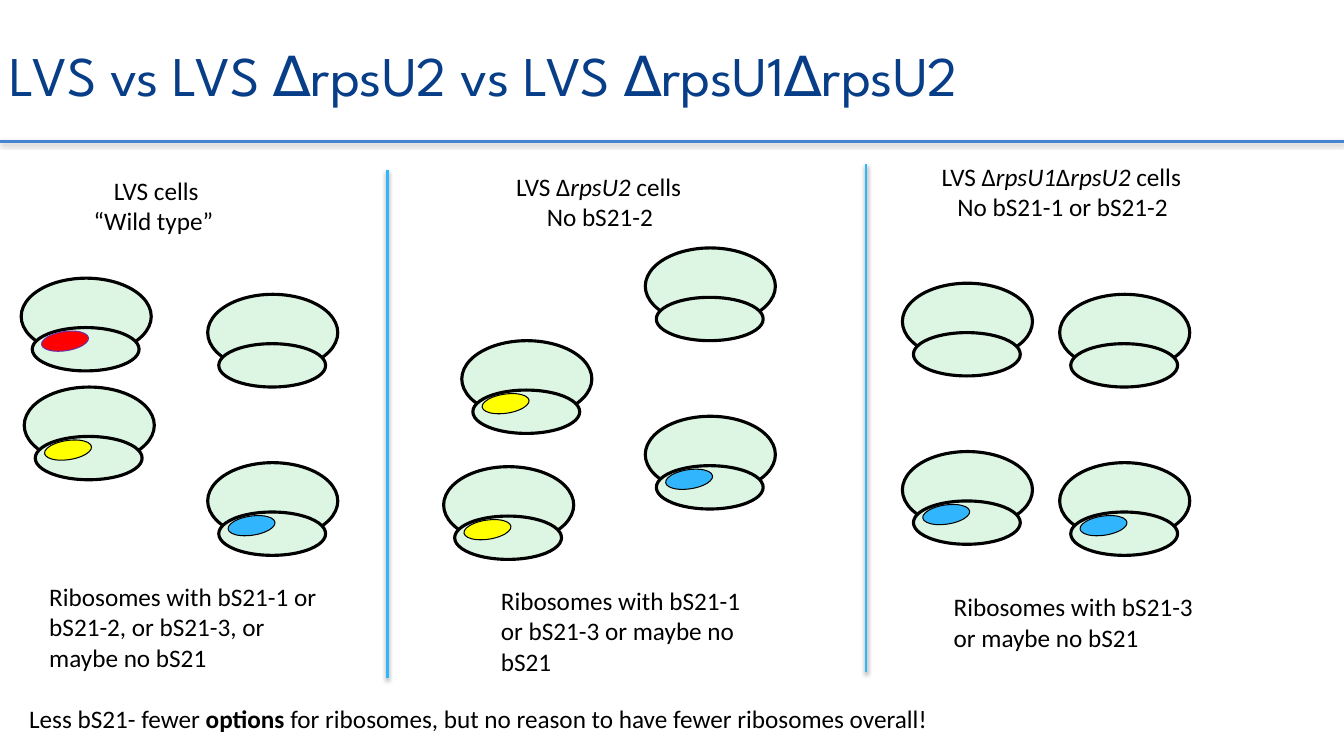
from dataclasses import dataclass

from lxml import etree
from pptx import Presentation
from pptx.dml.color import RGBColor
from pptx.enum import shapes, text
from pptx.oxml import ns
from pptx.util import Inches, Pt

COLORS = {
    "title": "073E87",
    "text": "000000",
    "rule": "4584D3",
    "divider": "31B6FD",
    "ribosome": "DDF5E3",
    "outline": "000000",
    "red": "FF0000",
    "red_outline": "7030A0",
    "yellow": "FFFF00",
    "blue": "31B6FD",
}
LEFT, CENTER, JUSTIFY = (
    text.PP_ALIGN.LEFT, text.PP_ALIGN.CENTER, text.PP_ALIGN.JUSTIFY)
BODY = {"size": Pt(18), "name": "Calibri"}
TITLE = {"size": Pt(40), "name": "League Spartan"}
ITALIC = {"italic": True}
BOLD = {"bold": True}
TILT = -8.4


@dataclass
class Run:
    words: str
    style: dict | None = None


@dataclass
class Para:
    runs: list[Run]
    align: text.PP_ALIGN = LEFT


@dataclass
class Label:
    box: tuple[float, float, float, float]
    paras: list[Para]


@dataclass
class Ribosome:
    x: float
    y: float
    protein: str | None = None


@dataclass
class Rule:
    start: tuple[float, float]
    end: tuple[float, float]
    color: str


RULES = [
    Rule((13.33, 1.4), (0, 1.4), "rule"),
    Rule((3.84, 1.69), (3.84, 6.73), "divider"),
    Rule((8.59, 1.63), (8.59, 6.67), "divider"),
]

HEADING = Label((0, 0.13, 13.21, 1.21),
                [Para([Run("LVS vs LVS ∆rpsU2 vs LVS ∆rpsU1∆rpsU2")])])

LABELS = [
    Label((0.82, 1.69, 1.46, 0.71), [
        Para([Run("LVS cells")], CENTER),
        Para([Run("“Wild type” ")], CENTER)]),
    Label((0.39, 5.72, 3.07, 1.01), [
        Para([Run("Ribosomes with bS21-1 or bS21-2, or bS21-3, "
                  "or maybe no bS21")])]),
    Label((5.02, 1.65, 1.86, 0.71), [
        Para([Run("LVS ∆"), Run("rpsU2", ITALIC), Run(" cells")], JUSTIFY),
        Para([Run("No bS21-2")], CENTER)]),
    Label((4.87, 5.76, 2.71, 1.01), [
        Para([Run("Ribosomes with bS21-1 or bS21-3 or maybe no bS21")])]),
    Label((9.24, 1.55, 2.6, 0.71), [
        Para([Run("LVS ∆"), Run("rpsU1", ITALIC), Run("∆"),
              Run("rpsU2", ITALIC), Run(" cells")], JUSTIFY),
        Para([Run("No bS21-1 or bS21-2")], CENTER)]),
    Label((9.36, 5.82, 2.71, 0.71), [
        Para([Run("Ribosomes with bS21-3 or maybe no bS21")])]),
    Label((0.19, 6.93, 9.25, 0.4), [
        Para([Run("Less bS21- fewer "), Run("options", BOLD),
              Run(" for ribosomes, but no reason to have fewer "
                  "ribosomes overall!")])]),
]

RIBOSOMES = [
    # Wild type
    Ribosome(0.21, 2.76, "red"),
    Ribosome(2.06, 4.59, "blue"),
    Ribosome(0.24, 3.84, "yellow"),
    Ribosome(2.06, 2.92),
    # Without bS21-2
    Ribosome(6.4, 4.13, "blue"),
    Ribosome(4.58, 3.38, "yellow"),
    Ribosome(6.4, 2.46),
    Ribosome(4.4, 4.63, "yellow"),
    # Without bS21-1 and bS21-2
    Ribosome(10.51, 4.59, "blue"),
    Ribosome(10.51, 2.92),
    Ribosome(8.95, 4.48, "blue"),
    Ribosome(8.95, 2.81),
]


def rgb(name: str) -> RGBColor:
    return RGBColor.from_string(COLORS[name])


def add_rule(slide, rule: Rule) -> None:
    """Draw a straight line with a soft shadow below it."""
    ends = [Inches(v) for v in (*rule.start, *rule.end)]
    line = slide.shapes.add_connector(shapes.MSO_CONNECTOR.STRAIGHT, *ends)
    line.line.color.rgb = rgb(rule.color)
    line.line.width = Pt(2)
    effects = etree.SubElement(line._element.spPr, ns.qn("a:effectLst"))
    shadow = etree.SubElement(
        effects, ns.qn("a:outerShdw"), blurRad=str(Pt(3.1)),
        dist=str(Pt(1.6)), dir="5400000", rotWithShape="0")
    black = etree.SubElement(shadow, ns.qn("a:srgbClr"), val="000000")
    etree.SubElement(black, ns.qn("a:alpha"), val="38000")


def add_label(slide, label: Label, font: dict, color: str,
              anchor=text.MSO_ANCHOR.TOP) -> None:
    sp = slide.shapes.add_textbox(*map(Inches, label.box))
    tf = sp.text_frame
    tf.word_wrap = True
    tf.vertical_anchor = anchor
    for i, para in enumerate(label.paras):
        p = tf.add_paragraph() if i else tf.paragraphs[0]
        p.alignment = para.align
        for run in para.runs:
            r = p.add_run()
            r.text = run.words
            r.font.color.rgb = rgb(color)
            for key, value in {**font, **(run.style or {})}.items():
                setattr(r.font, key, value)


def add_ellipse(group, box: tuple[float, float, float, float], fill: str,
                outline: str, width: float, rotation: float = 0) -> None:
    sp = group.shapes.add_shape(shapes.MSO_SHAPE.OVAL, *map(Inches, box))
    sp.shadow.inherit = False
    sp.rotation = rotation
    sp.fill.solid()
    sp.fill.fore_color.rgb = rgb(fill)
    sp.line.color.rgb = rgb(outline)
    sp.line.width = Pt(width)


def add_ribosome(slide, ribosome: Ribosome) -> None:
    """Group a large subunit, a small subunit and, if any, its bS21."""
    x, y = ribosome.x, ribosome.y
    group = slide.shapes.add_group_shape()
    add_ellipse(group, (x, y, 1.29, 0.76), "ribosome", "outline", 2.25)
    add_ellipse(group, (x + 0.11, y + 0.49, 1.06, 0.43),
                "ribosome", "outline", 2.25)
    if ribosome.protein:
        outline = "red_outline" if ribosome.protein == "red" else "outline"
        add_ellipse(group, (x + 0.2, y + 0.53, 0.47, 0.19),
                    ribosome.protein, outline, 0.75, TILT)


def main() -> None:
    prs = Presentation()
    prs.slide_width, prs.slide_height = Inches(13.33), Inches(7.5)
    s = prs.slides.add_slide(prs.slide_layouts[6])
    for rule in RULES:
        add_rule(s, rule)
    add_label(s, HEADING, TITLE, "title", text.MSO_ANCHOR.MIDDLE)
    for ribosome in RIBOSOMES:
        add_ribosome(s, ribosome)
    for label in LABELS:
        add_label(s, label, BODY, "text")
    prs.save("out.pptx")


if __name__ == "__main__":
    main()
